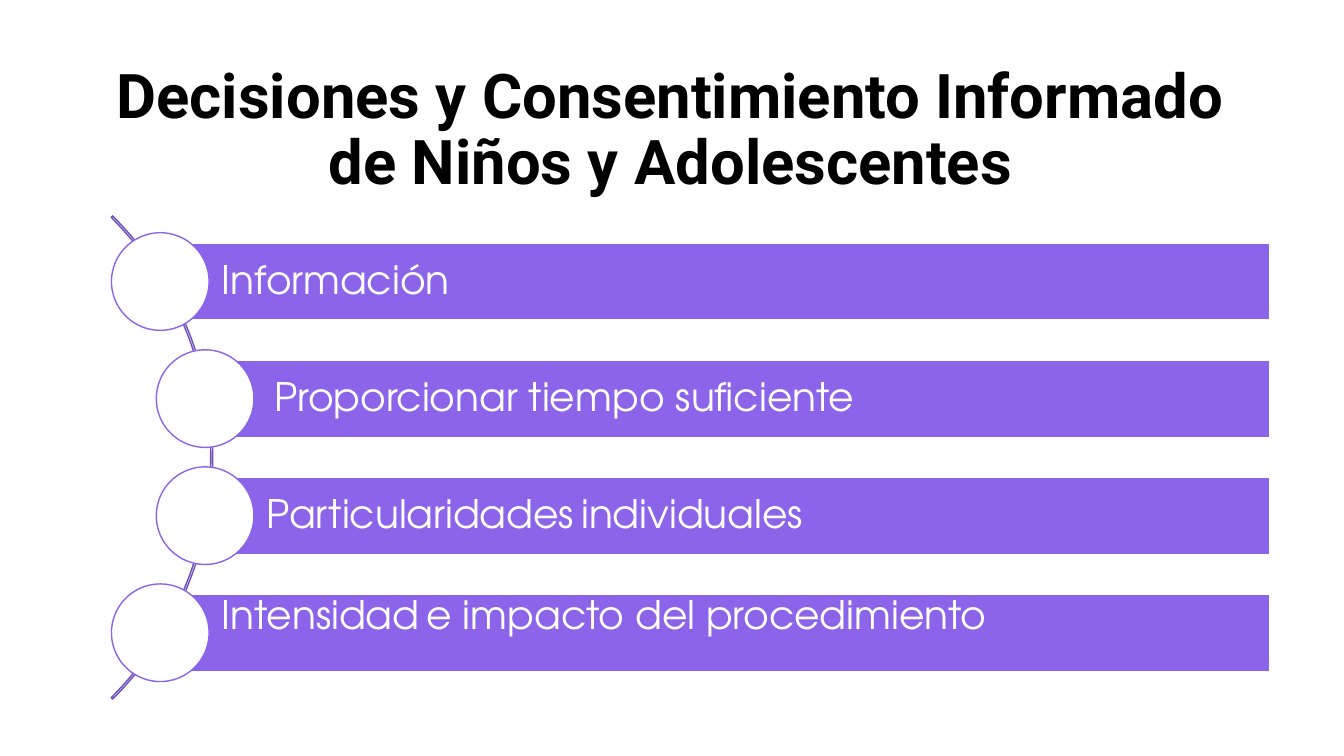
"""Build the slide on informed consent of children and adolescents."""
from pptx import Presentation
from pptx.dml.color import RGBColor as RGB
from pptx.enum.shapes import MSO_SHAPE as Kind
from pptx.enum.text import MSO_ANCHOR as Anchor, PP_ALIGN as Align
from pptx.util import Cm, Pt

HUES = {"bar": "8C64EA", "arc": "6F50B8", "white": "FFFFFF", "black": "000000"}


def draw(kind, left, top, wide, high, fill, line):
    item = slide.shapes.add_shape(kind, Cm(left), Cm(top), Cm(wide), Cm(high))
    item.shadow.inherit = False
    if fill:
        item.fill.solid()
        item.fill.fore_color.rgb = RGB.from_string(HUES[fill])
    else:
        item.fill.background()
    item.line.color.rgb = RGB.from_string(HUES[line])
    item.line.width = Pt(1)
    return item


def write(frame, parts, face, hue, bold, align, form):
    for key, value in form.items():
        setattr(frame, key, value)
    para = frame.paragraphs[0]
    para.alignment = align
    para.line_spacing = 0.9
    for text, size in parts:
        run = para.add_run()
        run.text = text
        look = {"name": face, "size": Pt(size), "bold": bold}
        for key, value in look.items():
            setattr(run.font, key, value)
        run.font.color.rgb = RGB.from_string(HUES[hue])


deck = Presentation()
deck.slide_width, deck.slide_height = Cm(33.87), Cm(19.05)
slide = deck.slides.add_slide(deck.slide_layouts[5])

title = slide.shapes.title
place = {"left": 1.88, "top": 0.28, "width": 30.05, "height": 7.74}
for key, value in place.items():
    setattr(title, key, Cm(value))
form = {"word_wrap": True, "vertical_anchor": Anchor.MIDDLE,
        "margin_left": Cm(0.25), "margin_right": Cm(0.25),
        "margin_top": Cm(0.13), "margin_bottom": Cm(1.8)}
head = "Decisiones y Consentimiento Informado de Niños y Adolescentes"
write(title.text_frame, [(head, 44)], "Roboto", "black", True, Align.CENTER, form)

arc = draw(Kind.BLOCK_ARC, -11.86, 2.92, 17.22, 17.22, None, "arc")
for index, value in enumerate((189, 27, 0.003)):
    arc.adjustments[index] = value

EDGE, FIRST, STEP, HIGH, DISC = 32, 6.12, 2.95, 1.95, 2.46
rows = [
    (4.04, 1.55, Anchor.MIDDLE, [("Información", 28)]),
    (5.17, 1.75, Anchor.MIDDLE, [("Proporcionar tiempo suficiente", 28)]),
    (5.17, 1.55, Anchor.MIDDLE,
     [("Particularidades", 28), (" ", 18), ("individuales", 28)]),
    (4.04, 1.55, Anchor.TOP,
     [("Intensidad", 28), (" ", 18), ("e impacto del procedimiento", 28)]),
]
for index, (left, inset, anchor, parts) in enumerate(rows):
    top = FIRST + index * STEP
    bar = draw(Kind.RECTANGLE, left, top, EDGE - left, HIGH, "bar", "white")
    form = {"word_wrap": True, "vertical_anchor": anchor,
            "margin_left": Cm(inset), "margin_right": Cm(0.13),
            "margin_top": Cm(0.05), "margin_bottom": Cm(0.05)}
    write(bar.text_frame, parts, "TeX Gyre Adventor", "white", False, Align.LEFT, form)
    draw(Kind.OVAL, left - DISC / 2, top + (HIGH - DISC) / 2, DISC, DISC, "white", "bar")

deck.save("out.pptx")
